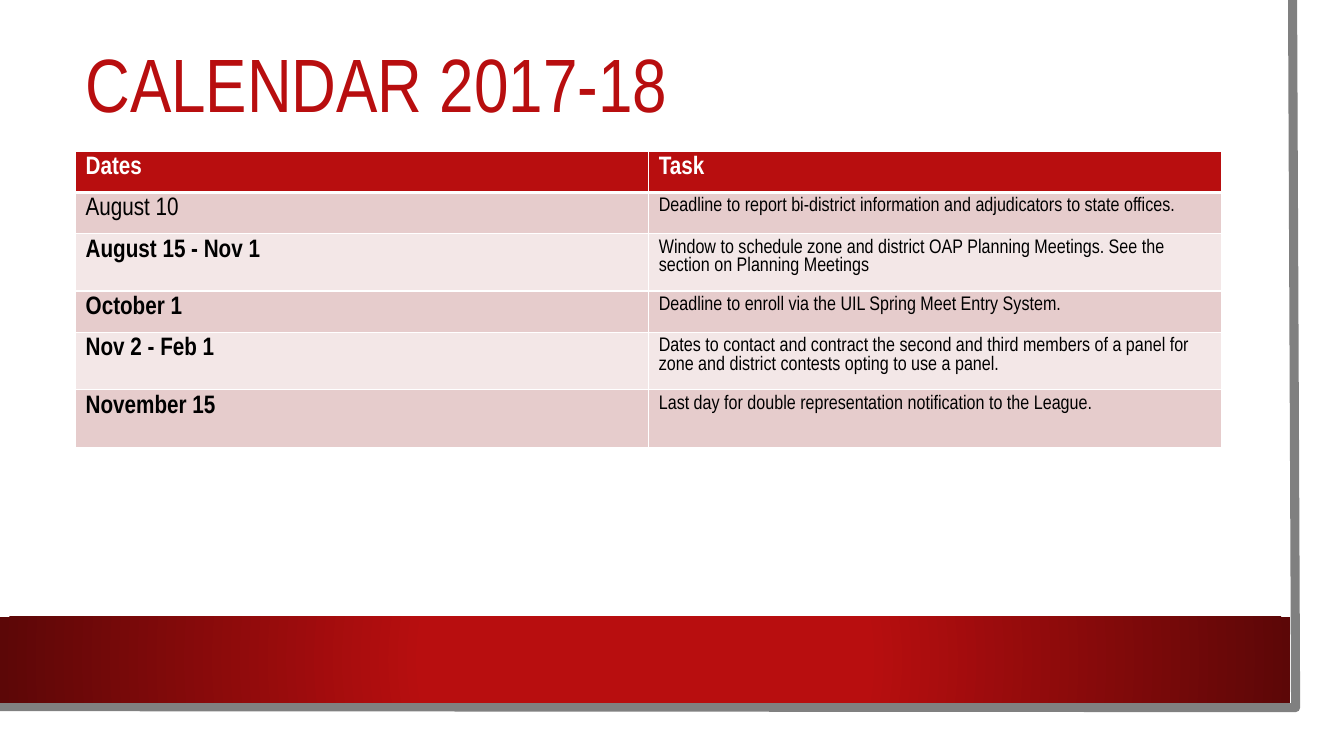
from lxml import etree
from pptx import Presentation
from pptx.dml.color import RGBColor
from pptx.enum import text
from pptx.oxml import parse_xml
from pptx.oxml.ns import nsdecls, qn
from pptx.enum import shapes
from pptx.util import Inches, Pt

FONT = "Arial Narrow"
RED, DARK_RED, GREY, WHITE, BLACK = "B80E0F", "5C0707", "808080", "FFFFFF", "000000"
BANDS = ["E6CCCC", "F3E7E7"]

HEADER = ("Dates", "Task")
# date, task, row height in inches
TASKS = [
    ("August 10", "Deadline to report bi-district information and adjudicators to state offices.", 0.41),
    ("August 15 - Nov 1", "Window to schedule zone and district OAP Planning Meetings. "
     "See the section on Planning Meetings", 0.47),
    ("October 1", "Deadline to enroll via the UIL Spring Meet Entry System.", 0.41),
    ("Nov 2 - Feb 1", "Dates to contact and contract the second and third members of a panel "
     "for zone and district contests opting to use a panel.", 0.57),
    ("November 15", "Last day for double representation notification to the League.", 0.57),
]


def rgb(value):
    return RGBColor.from_string(value)


def write(tf, words, size, color, bold=False, spacing=None):
    p = tf.paragraphs[0]
    p.line_spacing = spacing
    r = p.add_run()
    r.text = words
    r.font.name, r.font.size, r.font.bold = FONT, Pt(size), bold
    r.font.color.rgb = rgb(color)


def add_page_edge(slide, left, top, right, bottom):
    """Draw the grey line along the right and bottom sides of the page."""
    builder = slide.shapes.build_freeform(Inches(right - 0.03), Inches(top))
    builder.add_line_segments([(Inches(right), Inches(bottom)),
                               (Inches(left), Inches(bottom - 0.01))], close=False)
    sp = builder.convert_to_shape()
    sp.shadow.inherit = False
    sp.fill.background()
    sp.line.color.rgb = rgb(GREY)
    sp.line.width = Pt(6.5)


def add_red_band(slide, left, top, width, height):
    sp = slide.shapes.add_shape(shapes.MSO_SHAPE.RECTANGLE, Inches(left), Inches(top),
                                Inches(width), Inches(height))
    sp.shadow.inherit = False
    sp.line.fill.background()
    gradient = parse_xml(
        f'<a:gradFill {nsdecls("a")} rotWithShape="1"><a:gsLst>'
        f'<a:gs pos="34000"><a:srgbClr val="{RED}"/></a:gs>'
        f'<a:gs pos="100000"><a:srgbClr val="{DARK_RED}"/></a:gs></a:gsLst>'
        '<a:path path="circle"><a:fillToRect l="50000" t="50000" r="50000" b="50000"/></a:path>'
        '</a:gradFill>')
    sp._element.spPr.find(qn("a:prstGeom")).addnext(gradient)


def add_title(slide, words, left, top, width, height):
    tf = slide.shapes.add_textbox(Inches(left), Inches(top), Inches(width), Inches(height)).text_frame
    tf.word_wrap = True
    tf.vertical_anchor = text.MSO_ANCHOR.MIDDLE
    write(tf, words, 54, RED, spacing=0.9)


def set_borders(cell, **widths):
    tcPr = cell._tc.get_or_add_tcPr()
    for i, side in enumerate("LRTB"):
        ln = etree.Element(qn(f"a:ln{side}"), w=str(Pt(widths.get(side, 1))))
        color = etree.SubElement(etree.SubElement(ln, qn("a:solidFill")), qn("a:srgbClr"))
        color.set("val", WHITE)
        tcPr.insert(i, ln)


def fill_cell(cell, words, fill, size, color, bold, **borders):
    cell.fill.solid()
    cell.fill.fore_color.rgb = rgb(fill)
    set_borders(cell, **borders)
    write(cell.text_frame, words, size, color, bold)


def add_calendar(slide, left, top, width):
    heights = [0.41] + [height for _, _, height in TASKS]
    table = slide.shapes.add_table(len(heights), 2, Inches(left), Inches(top),
                                   Inches(width), Inches(sum(heights))).table
    for row, height in zip(table.rows, heights):
        row.height = Inches(height)
    for col, words in enumerate(HEADER):
        fill_cell(table.cell(0, col), words, RED, 18, WHITE, True, B=3)
    for i, (date, task, _) in enumerate(TASKS):
        band = BANDS[i % 2]
        top_border = 1 if i else 3
        fill_cell(table.cell(i + 1, 0), date, band, 18, BLACK, i > 0, T=top_border)
        fill_cell(table.cell(i + 1, 1), task, band, 14, BLACK, False, T=top_border)


def main():
    prs = Presentation()
    prs.slide_width, prs.slide_height = Inches(13.33), Inches(7.5)
    slide = prs.slides.add_slide(prs.slide_layouts[6])
    add_page_edge(slide, -0.03, 0, 12.85, 7.02)
    add_red_band(slide, 0, 6.12, 12.8, 0.85)
    add_title(slide, "CALENDAR 2017-18", 0.75, 0.24, 11.37, 1.26)
    add_calendar(slide, 0.75, 1.5, 11.37)
    prs.save("out.pptx")


if __name__ == "__main__":
    main()
